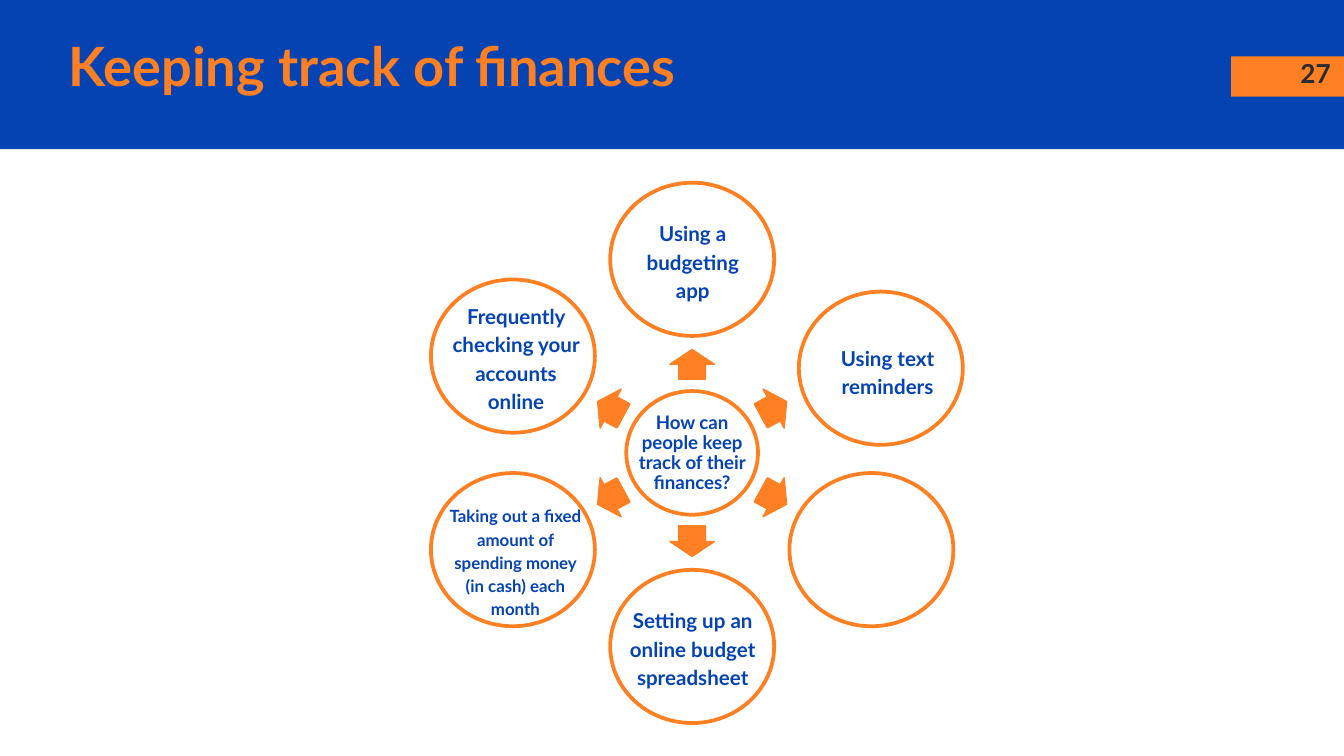
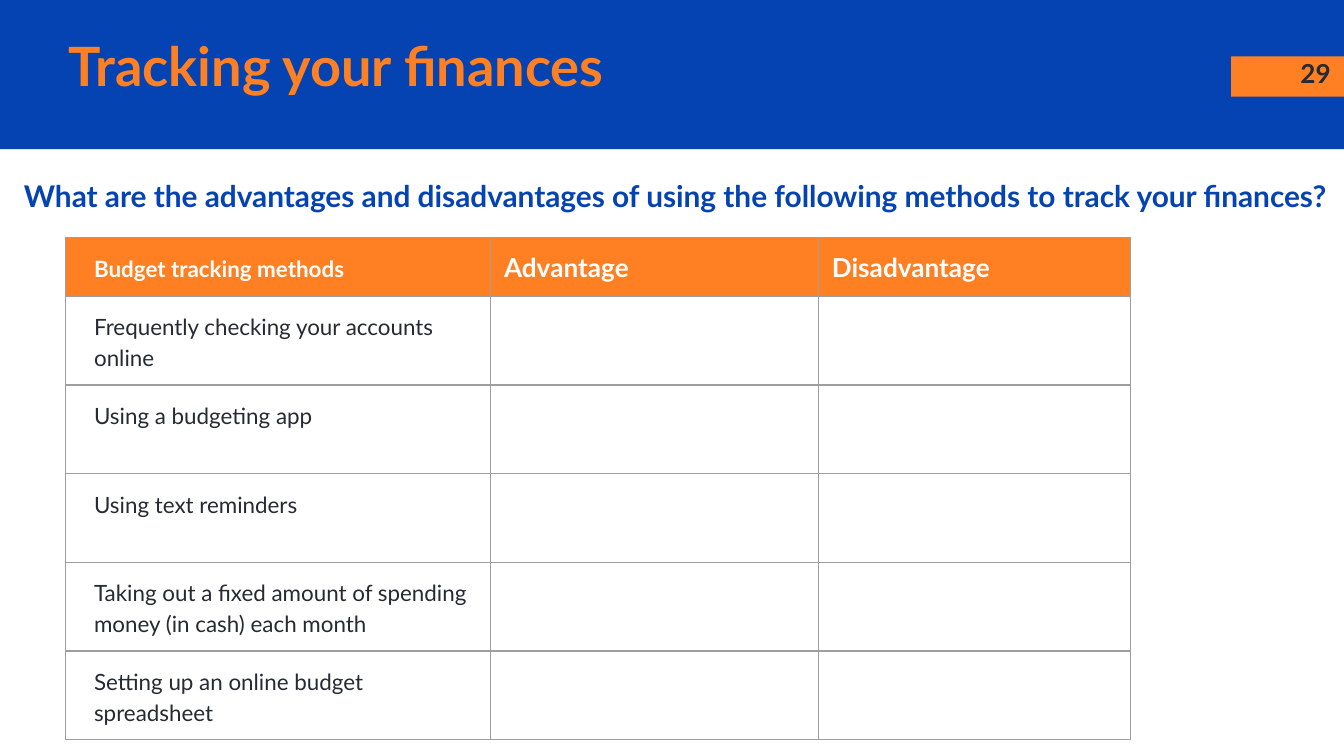
from math import atan2, cos, degrees, radians, sin
from typing import NamedTuple

from lxml import etree
from pptx import Presentation
from pptx import util as u
from pptx.dml.color import RGBColor
from pptx.enum import shapes, text
from pptx.oxml.ns import qn

BLUE = RGBColor(0x05, 0x43, 0xB3)
ORANGE = RGBColor(0xFF, 0x80, 0x22)
INK = RGBColor(0x26, 0x2A, 0x33)
WHITE = RGBColor(0xFF, 0xFF, 0xFF)
GRID_GREY = RGBColor(0x9E, 0x9E, 0x9E)
FONT = "Lato"
INDENT = 0.11
TITLE_ONLY = 5

HUB_X, HUB_Y = 5.15, 3.37
RING_RADII = (1.54, 1.44)
ARROW_RADII = (0.7, 0.66)
SHAFT_RADII = (0.67, 0.62)

METHODS = (
    "Frequently checking your accounts online",
    "Using a budgeting app",
    "Using text reminders",
    "Taking out a fixed amount of spending money (in cash) each month",
    "Setting up an online budget spreadsheet",
)
CHECKING, APP, REMINDERS, CASH, SPREADSHEET = METHODS


class Box(NamedTuple):
    left: float
    top: float
    width: float
    height: float

    def lengths(self) -> tuple:
        return tuple(u.Inches(side) for side in self)


class Spoke(NamedTuple):
    angle: int
    label: str = ""
    label_box: Box | None = None
    size: float = 11
    shift: tuple[float, float] = (0, 0)


SPOKES = (
    Spoke(0, APP, Box(4.58, 1.53, 1.04, 0.81)),
    Spoke(60, REMINDERS, Box(6.12, 2.35, 0.86, 0.81), shift=(0.07, 0.09)),
    Spoke(120),
    Spoke(180, SPREADSHEET, Box(4.52, 4.41, 1.16, 0.81)),
    Spoke(240, CASH, Box(3.2, 3.77, 1.16, 0.81), size=9),
    Spoke(300, CHECKING, Box(3.23, 2.25, 1.11, 0.81)),
)


def write(frame, content: str, *, size: float, color: RGBColor, bold: bool = True,
          align=text.PP_ALIGN.LEFT, anchor=text.MSO_ANCHOR.TOP, inset: float = 0.1,
          indent: float = 0, spacing: float = 1) -> None:
    frame.word_wrap = True
    frame.vertical_anchor = anchor
    frame.margin_left = frame.margin_right = u.Inches(inset)
    frame.margin_top = frame.margin_bottom = u.Inches(inset)
    paragraph = frame.paragraphs[0]
    properties = paragraph._p.get_or_add_pPr()
    properties.set("marL", str(u.Inches(indent)))
    properties.set("indent", "0")
    paragraph.alignment = align
    paragraph.line_spacing = spacing
    run = paragraph.add_run()
    run.text = content
    run.font.name = FONT
    run.font.size = u.Pt(size)
    run.font.bold = bold
    run.font.color.rgb = color


def add_label(slide, box: Box, content: str, **style) -> None:
    write(slide.shapes.add_textbox(*box.lengths()).text_frame, content, **style)


def add_figure(slide, kind, box: Box, fill: RGBColor | None = None,
               line: RGBColor | None = None, weight: float = 0.75, rotation: float = 0):
    figure = slide.shapes.add_shape(kind, *box.lengths())
    figure.shadow.inherit = False
    figure.rotation = rotation
    if fill is None:
        figure.fill.background()
    else:
        figure.fill.solid()
        figure.fill.fore_color.rgb = fill
    if line is None:
        figure.line.fill.background()
    else:
        figure.line.color.rgb = line
        figure.line.width = u.Pt(weight)
    return figure


def add_slide(deck, heading: str, number: int):
    slide = deck.slides.add_slide(deck.slide_layouts[TITLE_ONLY])
    add_figure(slide, shapes.MSO_SHAPE.RECTANGLE, Box(0, 0, 10, 1.11), fill=BLUE)
    add_figure(slide, shapes.MSO_SHAPE.RECTANGLE, Box(9.16, 0.42, 0.84, 0.3), fill=ORANGE)
    add_label(slide, Box(9.4, 0.33, 0.6, 0.43), str(number), size=14, color=INK,
              align=text.PP_ALIGN.RIGHT)
    title = slide.shapes.title
    title.left, title.top, title.width, title.height = Box(0.41, 0.2, 8.46, 0.56).lengths()
    title.text_frame.auto_size = text.MSO_AUTO_SIZE.NONE
    write(title.text_frame, heading, size=29, color=ORANGE, anchor=text.MSO_ANCHOR.MIDDLE)
    title.element.getparent().append(title.element)
    return slide


def around_hub(angle: int, radii: tuple[float, float], width: float, height: float,
               shift: tuple[float, float] = (0, 0)) -> Box:
    x = HUB_X + radii[0] * sin(radians(angle)) + shift[0]
    y = HUB_Y - radii[1] * cos(radians(angle)) + shift[1]
    return Box(x - width / 2, y - height / 2, width, height)


def add_spoke(slide, spoke: Spoke) -> None:
    turn = radians(spoke.angle)
    rotation = degrees(atan2(-RING_RADII[1] * cos(turn), RING_RADII[0] * sin(turn))) % 360
    arrow = add_figure(slide, shapes.MSO_SHAPE.RIGHT_ARROW,
                       around_hub(spoke.angle, ARROW_RADII, 0.22, 0.33),
                       fill=ORANGE, line=ORANGE, rotation=rotation)
    arrow.adjustments[0] = 0.6
    arrow.adjustments[1] = 0.5
    add_figure(slide, shapes.MSO_SHAPE.RECTANGLE,
               around_hub(spoke.angle, SHAFT_RADII, 0.15, 0.2),
               fill=ORANGE, line=ORANGE, rotation=rotation)
    add_figure(slide, shapes.MSO_SHAPE.OVAL,
               around_hub(spoke.angle, RING_RADII, 1.22, 1.14, spoke.shift),
               line=ORANGE, weight=2)
    if spoke.label_box:
        add_label(slide, spoke.label_box, spoke.label, size=spoke.size, color=BLUE,
                  align=text.PP_ALIGN.CENTER, anchor=text.MSO_ANCHOR.MIDDLE,
                  inset=0.01, indent=INDENT, spacing=1.15)


def build_wheel(deck) -> None:
    slide = add_slide(deck, "Keeping track of finances", 27)
    add_figure(slide, shapes.MSO_SHAPE.OVAL, around_hub(0, (0, 0), 0.98, 0.92),
               line=ORANGE, weight=2)
    add_label(slide, Box(4.72, 3.05, 0.86, 0.65), "How can people keep track of their finances?",
              size=10, color=BLUE, align=text.PP_ALIGN.CENTER,
              anchor=text.MSO_ANCHOR.MIDDLE, inset=0.01, spacing=0.9)
    for spoke in SPOKES:
        add_spoke(slide, spoke)


def format_cell(cell, fill: RGBColor | None) -> None:
    if fill is None:
        cell.fill.background()
    else:
        cell.fill.solid()
        cell.fill.fore_color.rgb = fill
    properties = cell._tc.get_or_add_tcPr()
    for position, side in enumerate(("lnL", "lnR", "lnT", "lnB")):
        border = etree.Element(qn(f"a:{side}"), w=str(u.Pt(0.75)))
        paint = etree.SubElement(border, qn("a:solidFill"))
        etree.SubElement(paint, qn("a:srgbClr"), val=str(GRID_GREY))
        properties.insert(position, border)


def write_cell(cell, content: str, **style) -> None:
    write(cell.text_frame, content, **style)
    cell.margin_left = cell.margin_right = u.Inches(0.1)
    cell.margin_top = cell.margin_bottom = u.Inches(0.1)


def build_comparison(deck) -> None:
    slide = add_slide(deck, "Tracking your finances", 29)
    add_label(slide, Box(-0.03, 1.18, 10.06, 0.47),
              "What are the advantages and disadvantages of using the following methods "
              "to track your finances?",
              size=16, color=BLUE, indent=INDENT, spacing=1.15)
    widths = (3.16, 2.44, 2.32)
    heights = (0.43,) + (0.66,) * len(METHODS)
    frame = Box(0.49, 1.77, sum(widths), sum(heights))
    comparison = slide.shapes.add_table(len(heights), len(widths), *frame.lengths()).table
    comparison.first_row = comparison.horz_banding = False
    for column, width in zip(comparison.columns, widths):
        column.width = u.Inches(width)
    for row, height in zip(comparison.rows, heights):
        row.height = u.Inches(height)
    for index, row in enumerate(comparison.rows):
        for cell in row.cells:
            format_cell(cell, ORANGE if index == 0 else None)
    write_cell(comparison.cell(0, 0), "Budget tracking methods", size=12, color=WHITE,
               indent=INDENT, spacing=1.15)
    for column, heading in enumerate(("Advantage", "Disadvantage"), start=1):
        write_cell(comparison.cell(0, column), heading, size=14, color=WHITE)
    for row, method in enumerate(METHODS, start=1):
        write_cell(comparison.cell(row, 0), method, size=12, color=INK, bold=False,
                   indent=INDENT, spacing=1.15)


def main() -> None:
    deck = Presentation()
    deck.slide_width = u.Inches(10)
    deck.slide_height = deck.slide_width * 9 // 16
    build_wheel(deck)
    build_comparison(deck)
    deck.save("out.pptx")


if __name__ == "__main__":
    main()
